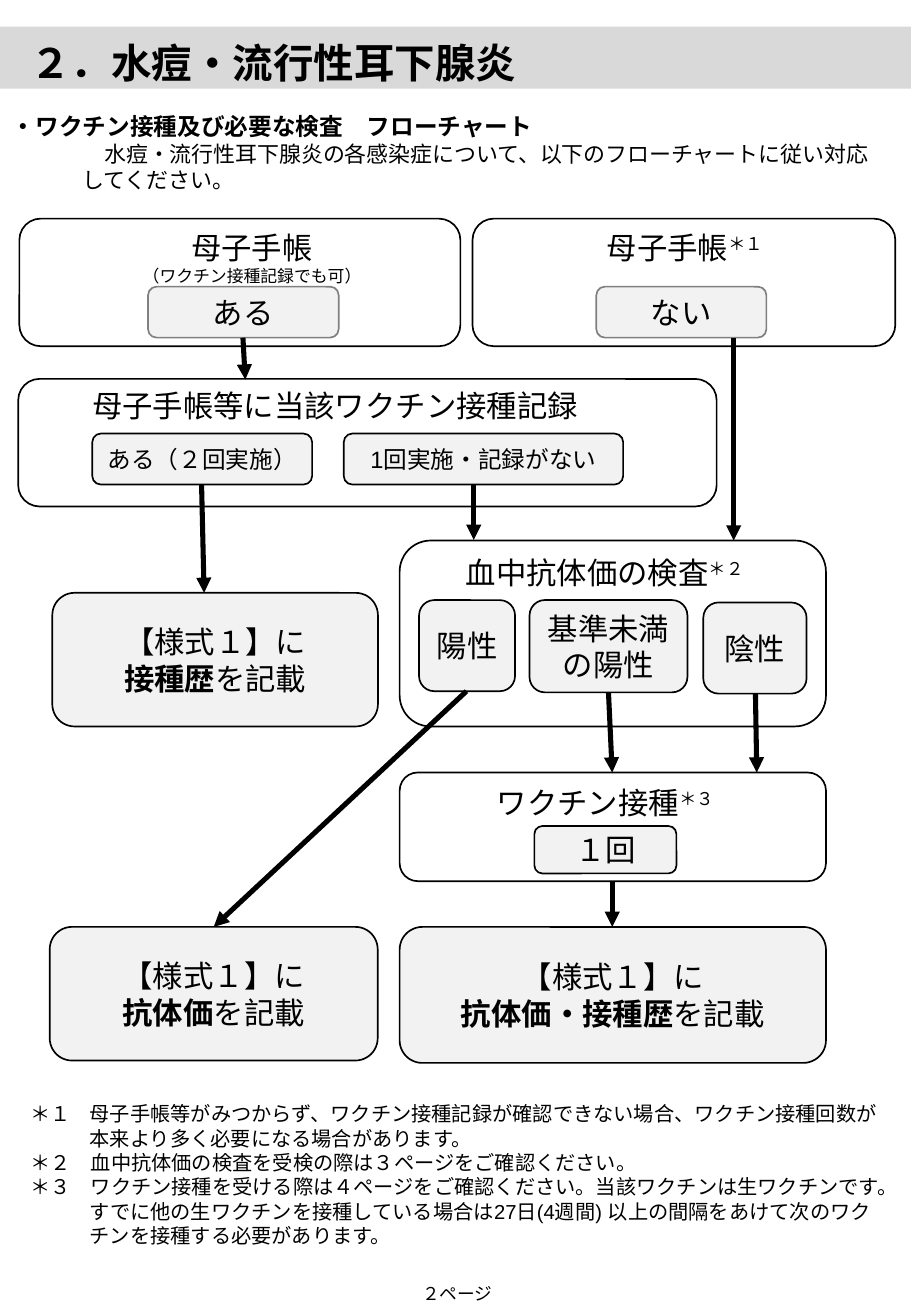
from lxml import etree
from pptx import Presentation
from pptx.dml.color import RGBColor
from pptx.enum import shapes, text
from pptx.oxml import ns
from pptx.util import Pt

BLACK, GRAY, LIGHT, BAND, WHITE = "000000", "808080", "F2F2F2", "D9D9D9", "FFFFFF"
CENTER, LEFT = text.PP_ALIGN.CENTER, text.PP_ALIGN.LEFT

PANELS = [
    (11.5, 129.6, 261.4, 75.6),
    (280.1, 129.6, 250.6, 75.6),
    (10.8, 224.6, 414, 75.6),
    (236.9, 320.4, 252.7, 110.2),
    (236.9, 457.9, 252.7, 64.4),
]
OPTIONS = [
    ((87.8, 169.9, 113, 30.2), ["ある"], {"font": "Arial", "line": GRAY}),
    ((353.5, 169.9, 100.8, 30.2), ["ない"], {"font": "Arial", "line": GRAY}),
    ((54.7, 257, 130.3, 30.2), [[("ある（", {"font": "Arial"}), ("２回実施）", {})]], {"size": 14}),
    ((203.8, 257, 165.6, 30.2), ["1回実施・記録がない"], {"font": "Arial", "size": 14}),
    ((248.4, 355.7, 56.9, 54), ["陽性"], {}),
    ((313.9, 355.7, 93.6, 54.7), ["基準未満", "の陽性"], {}),
    ((416.9, 357.1, 61.2, 54), ["陰性"], {}),
    ((316.8, 489.6, 84.2, 28.1), ["１回"], {}),
]
RESULTS = [
    ((31, 351.4, 193, 79.2), "接種歴"),
    ((29.5, 549.4, 194.4, 79.2), "抗体価"),
    ((236.9, 549.4, 252.7, 80.6), "抗体価・接種歴"),
]
CAPTIONS = [
    ((77, 132.5, 144.7, 41), ["母子手帳", [("（ワクチン接種記録でも可）", {"size": 10})]],
     {"font": "Arial"}),
    ((344.9, 132.5, 122.4, 28.8), [[("母子手帳", {}), ("＊１", {"raised": True})]],
     {"font": "Arial"}),
    ((47.5, 226.1, 340.6, 28.8), ["母子手帳等に当該ワクチン接種記録"],
     {"font": "Arial", "align": LEFT}),
    ((252.7, 324.7, 211.7, 28.8), [[("血中抗体価の検査", {}), ("＊２", {"raised": True})]], {}),
    ((269.3, 461.5, 179.3, 28.8), [[("ワクチン接種", {}), ("＊３", {"raised": True})]], {}),
]
ARROWS = [
    (144, 200.2, 145.4, 225),
    (434.9, 200.2, 434.9, 320.4),
    (119.5, 287.3, 121, 351.4),
    (280.8, 287.2, 280.8, 320),
    (276.5, 409.7, 126.7, 549.4),
    (360.7, 410.4, 362.9, 457.9),
    (447.8, 411.1, 448.6, 457.9),
    (362.9, 522.5, 362.9, 549.4),
]
NOTES = [
    "＊１\t母子手帳等がみつからず、ワクチン接種記録が確認できない場合、"
    "ワクチン接種回数が本来より多く必要になる場合があります。",
    "＊２\u3000血中抗体価の検査を受検の際は３ページをご確認ください。".replace("\u3000", "　"),
    [("＊３　ワクチン接種を受ける際は４ページをご確認ください。当該ワクチンは"
      "生ワクチンです。すでに他の生ワクチンを接種している場合は", {}),
     ("27日(4週間) ", {"font": "Arial"}),
     ("以上の間隔をあけて次のワクチンを接種する必要があります。", {})],
]
NOTES[1] = "＊２　血中抗体価の検査を受検の際は３ページをご確認ください。"


def color(value):
    """Return the colour for a hex string."""
    return RGBColor.from_string(value)


def add_run(paragraph, content, size=18, font="Calibri", bold=False, raised=False):
    """Append one formatted run to a paragraph."""
    run = paragraph.add_run()
    run.text = content
    run.font.size, run.font.name, run.font.bold = Pt(size), font, bold
    run.font.color.rgb = color(BLACK)
    if raised:
        run._r.get_or_add_rPr().set("baseline", "30000")


def write(frame, lines, align=CENTER, margin=0, indent=0, **style):
    """Fill a text frame with lines, each a string or a list of runs."""
    frame.word_wrap = True
    for number, line in enumerate(lines):
        paragraph = frame.add_paragraph() if number else frame.paragraphs[0]
        paragraph.alignment = align
        if margin:
            properties = paragraph._p.get_or_add_pPr()
            properties.set("marL", str(Pt(margin)))
            properties.set("indent", str(Pt(indent)))
        for content, override in [(line, {})] if isinstance(line, str) else line:
            add_run(paragraph, content, **{**style, **override})


def add_label(slide, box, lines, **style):
    """Add a text box."""
    label = slide.shapes.add_textbox(*map(Pt, box))
    write(label.text_frame, lines, **style)


def add_box(slide, box, lines=(), fill=LIGHT, line=BLACK, rounded=True, **style):
    """Add a filled box with optional outline and centred text."""
    kind = shapes.MSO_SHAPE.ROUNDED_RECTANGLE if rounded else shapes.MSO_SHAPE.RECTANGLE
    shape = slide.shapes.add_shape(kind, *map(Pt, box))
    shape.shadow.inherit = False
    shape.fill.solid()
    shape.fill.fore_color.rgb = color(fill)
    if line:
        shape.line.color.rgb = color(line)
        shape.line.width = Pt(1)
    else:
        shape.line.fill.background()
    shape.text_frame.vertical_anchor = text.MSO_ANCHOR.MIDDLE
    write(shape.text_frame, lines, **style)


def add_arrow(slide, ends):
    """Add a thick arrow between two points."""
    arrow = slide.shapes.add_connector(shapes.MSO_CONNECTOR.STRAIGHT, *map(Pt, ends))
    arrow.line.color.rgb = color(BLACK)
    arrow.line.width = Pt(3)
    etree.SubElement(arrow.line._get_or_add_ln(), ns.qn("a:tailEnd"), type="triangle")
    etree.SubElement(arrow._element.spPr, ns.qn("a:effectLst"))


def main():
    """Build the flowchart slide and save it."""
    presentation = Presentation()
    presentation.slide_width, presentation.slide_height = Pt(540), Pt(780)
    slide = presentation.slides.add_slide(presentation.slide_layouts[6])

    add_box(slide, (-8.6, 15.8, 570.2, 36.7), fill=BAND, line=None, rounded=False)
    add_label(slide, (10.8, 18.7, 414.7, 36), ["２．水痘・流行性耳下腺炎"],
              size=24, font="Arial", bold=True, align=LEFT)
    add_label(slide, (0, 62.6, 530.6, 26), ["・ワクチン接種及び必要な検査　フローチャート"],
              size=14, font="Arial", bold=True, align=LEFT)
    add_label(slide, (0, 79.5, 530.6, 40),
              ["　水痘・流行性耳下腺炎の各感染症について、以下のフローチャートに従い対応してください。"],
              size=13, font="Arial", align=LEFT, margin=41.8)

    for box in PANELS:
        add_box(slide, box, fill=WHITE)
    for box, lines, style in OPTIONS:
        add_box(slide, box, lines, **style)
    for box, record in RESULTS:
        lines = ["【様式１】に", [(record, {"bold": True}), ("を記載", {})]]
        add_box(slide, box, lines, font="Arial")
    for box, lines, style in CAPTIONS:
        add_label(slide, box, lines, **style)
    for ends in ARROWS:
        add_arrow(slide, ends)

    add_label(slide, (10.8, 649.4, 519.1, 94.3), NOTES,
              size=12, align=LEFT, margin=35.3, indent=-35.3)
    add_label(slide, (191.5, 756.7, 159.1, 20.2), ["２ページ"], size=10.5, font="Arial")
    presentation.save("out.pptx")


if __name__ == "__main__":
    main()
